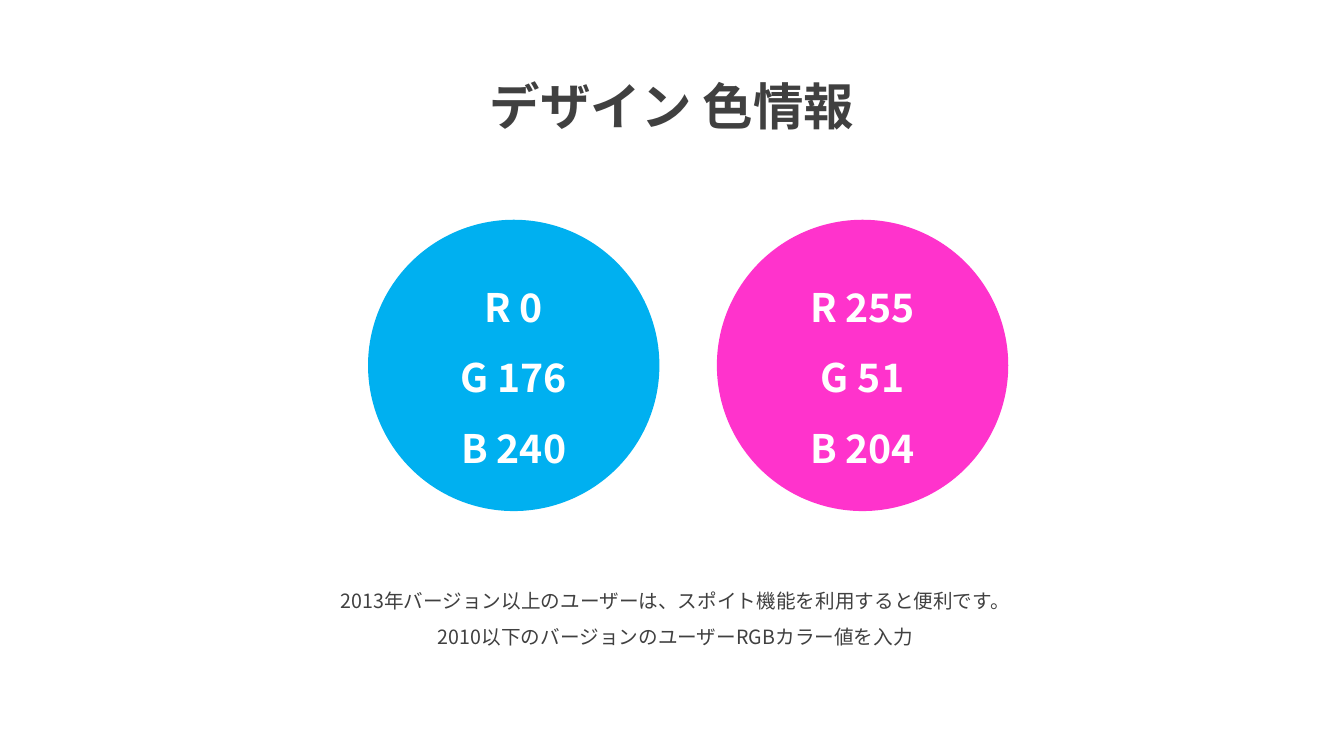
from dataclasses import dataclass

from lxml import etree
from pptx import Presentation
from pptx.dml.color import RGBColor
from pptx.enum.shapes import MSO_SHAPE
from pptx.enum.text import MSO_ANCHOR, MSO_AUTO_SIZE, PP_ALIGN
from pptx.oxml.ns import qn
from pptx.text.text import TextFrame
from pptx.util import Inches, Pt

ELLIPSE = MSO_SHAPE.OVAL
MIDDLE = MSO_ANCHOR.MIDDLE
CENTER = PP_ALIGN.CENTER
GROW = MSO_AUTO_SIZE.SHAPE_TO_FIT_TEXT

FONT = "Noto Sans CJK KR"
COLORS = {"cyan": "00B0F0", "pink": "FF33CC", "dark": "404040", "white": "FFFFFF"}
LINE_FORMAT = {"alignment": CENTER, "line_spacing": 1.5}

SWATCH_LEFT, SWATCH_TOP = 3.65, 2.18
SWATCH_SIZE, SWATCH_STEP = 2.89, 3.46


@dataclass(frozen=True)
class Style:
    size: int
    color: str
    bold: bool


@dataclass(frozen=True)
class Caption:
    lines: tuple[str, ...]
    box: tuple[float, float, float, float]
    style: Style


SWATCH_STYLE = Style(28, "white", True)
SWATCHES = ("cyan", "pink")
CAPTIONS = (
    Caption(("デザイン 色情報",), (4.24, 0.4, 4.85, 0.91), Style(36, "dark", True)),
    Caption(
        (
            "2013年バージョン以上のユーザーは、スポイト機能を利用すると便利です。",
            "2010以下のバージョンのユーザーRGBカラー値を入力",
        ),
        (2.52, 5.68, 8.36, 0.77),
        Style(14, "dark", False),
    ),
)


def write_lines(frame: TextFrame, lines: tuple[str, ...], style: Style) -> None:
    frame.word_wrap = True
    font_format = {"name": FONT, "size": Pt(style.size), "bold": style.bold}
    for index, line in enumerate(lines):
        paragraph = frame.add_paragraph() if index else frame.paragraphs[0]
        for attribute, value in LINE_FORMAT.items():
            setattr(paragraph, attribute, value)
        run = paragraph.add_run()
        run.text = line
        for attribute, value in font_format.items():
            setattr(run.font, attribute, value)
        run.font.color.rgb = RGBColor.from_string(COLORS[style.color])
        east_asian = etree.SubElement(run._r.get_or_add_rPr(), qn("a:ea"))
        east_asian.set("typeface", FONT)


def add_swatch(slide, index: int, color: str) -> None:
    """Draw a circle labelled with the RGB values of its own fill."""
    left = SWATCH_LEFT + index * SWATCH_STEP
    circle = slide.shapes.add_shape(
        ELLIPSE, *map(Inches, (left, SWATCH_TOP, SWATCH_SIZE, SWATCH_SIZE))
    )
    rgb = RGBColor.from_string(COLORS[color])
    circle.shadow.inherit = False
    circle.fill.solid()
    circle.fill.fore_color.rgb = rgb
    circle.line.fill.background()
    circle.text_frame.vertical_anchor = MIDDLE
    values = tuple(f"{channel} {value}" for channel, value in zip("RGB", rgb))
    write_lines(circle.text_frame, values, SWATCH_STYLE)


def add_caption(slide, caption: Caption) -> None:
    frame = slide.shapes.add_textbox(*map(Inches, caption.box)).text_frame
    frame.auto_size = GROW
    write_lines(frame, caption.lines, caption.style)


def main() -> None:
    presentation = Presentation()
    presentation.slide_width = Inches(13.33)
    presentation.slide_height = Inches(7.5)
    slide = presentation.slides.add_slide(presentation.slide_layouts[6])
    for index, color in enumerate(SWATCHES):
        add_swatch(slide, index, color)
    for caption in CAPTIONS:
        add_caption(slide, caption)
    presentation.save("out.pptx")


if __name__ == "__main__":
    main()
